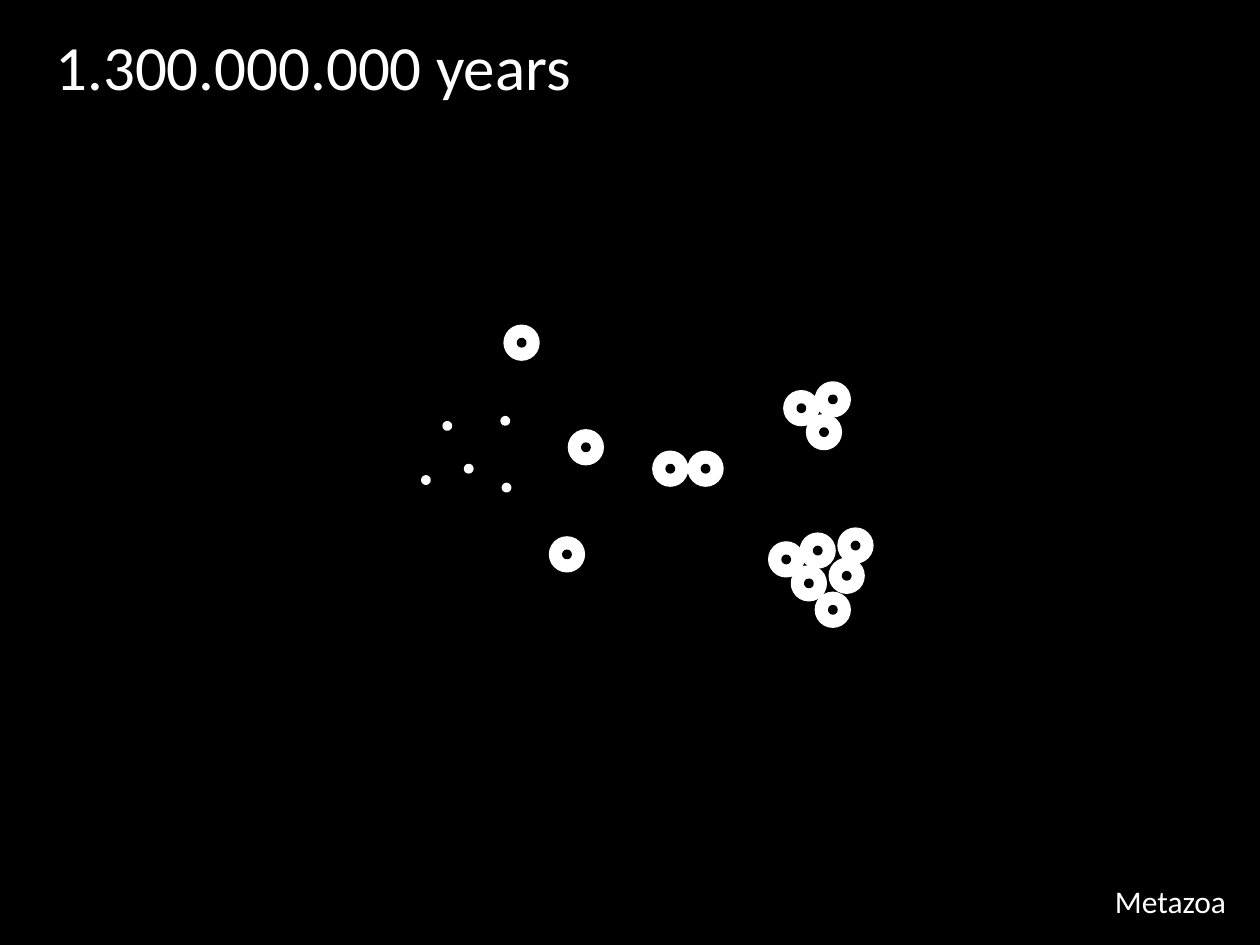
from dataclasses import dataclass

from pptx import Presentation
from pptx.dml.color import RGBColor
from pptx.enum.shapes import MSO_SHAPE
from pptx.enum.text import MSO_ANCHOR, MSO_AUTO_SIZE, PP_ALIGN
from pptx.util import Inches, Pt


@dataclass(frozen=True)
class Theme:
    dark: RGBColor = RGBColor(0, 0, 0)
    light: RGBColor = RGBColor(255, 255, 255)
    font: str = "Calibri"
    head: int = 36
    note: int = 18
    line: int = 2
    cell: float = 0.26
    dot: float = 0.05


class Board:
    def __init__(self, slide, theme):
        self.slide = slide
        self.theme = theme
        fill = slide.background.fill
        fill.solid()
        fill.fore_color.rgb = theme.dark

    def paint(self, shape, color):
        shape.fill.solid()
        shape.fill.fore_color.rgb = color
        shape.line.color.rgb = color
        shape.line.width = Pt(self.theme.line)

    def add_run(self, frame, text, size):
        para = frame.paragraphs[0]
        para.alignment = PP_ALIGN.LEFT
        run = para.add_run()
        run.text = text
        run.font.name = self.theme.font
        run.font.size = Pt(size)
        run.font.color.rgb = self.theme.light

    def title(self, text, x, y, w, h):
        shape = self.slide.shapes.title
        shape.left, shape.top = Inches(x), Inches(y)
        shape.width, shape.height = Inches(w), Inches(h)
        self.paint(shape, self.theme.dark)
        frame = shape.text_frame
        frame.auto_size = MSO_AUTO_SIZE.NONE
        frame.vertical_anchor = MSO_ANCHOR.MIDDLE
        self.add_run(frame, text, self.theme.head)

    def label(self, text, x, y, w, h):
        box = self.slide.shapes.add_textbox(
            Inches(x), Inches(y), Inches(w), Inches(h))
        frame = box.text_frame
        frame.word_wrap = False
        frame.auto_size = MSO_AUTO_SIZE.SHAPE_TO_FIT_TEXT
        self.add_run(frame, text, self.theme.note)

    def group(self):
        return self.slide.shapes.add_group_shape()

    def disc(self, group, x, y, size, color):
        """Draw a disc centred on x, y."""
        shape = group.shapes.add_shape(
            MSO_SHAPE.OVAL, Inches(x - size / 2), Inches(y - size / 2),
            Inches(size), Inches(size))
        shape.shadow.inherit = False
        self.paint(shape, color)

    def dot(self, group, x, y):
        self.disc(group, x, y, self.theme.dot, self.theme.light)

    def cell(self, group, x, y):
        """Draw a light cell with a dark nucleus."""
        self.disc(group, x, y, self.theme.cell, self.theme.light)
        self.disc(group, x, y, self.theme.dot, self.theme.dark)


# Centres of the single dots, free cells and cell clusters
DOTS = [(3.72, 3.72), (4.01, 3.34), (3.38, 3.81), (3.55, 3.38), (4.02, 3.87)]
FREE = [(4.65, 3.55), (5.32, 3.72), (4.14, 2.72), (4.5, 4.4), (5.6, 3.72)]
TRIO = [(6.36, 3.24), (6.54, 3.43), (6.61, 3.17)]
SHIFT = (-0.12, 1.2)
OUTER = [(6.72, 4.57), (6.61, 4.84), (6.79, 4.33)]


def main():
    deck = Presentation()
    deck.slide_width, deck.slide_height = Inches(10), Inches(7.5)
    board = Board(deck.slides.add_slide(deck.slide_layouts[5]), Theme())

    # Title
    board.title("1.300.000.000 years", 0.34, 0.3, 4.61, 0.44)

    # Dots and free cells share one group
    colony = board.group()
    for x, y in DOTS:
        board.dot(colony, x, y)
    for x, y in FREE:
        board.cell(colony, x, y)

    # The lower cluster repeats the trio and adds an outer row
    inner = [(x + SHIFT[0], y + SHIFT[1]) for x, y in TRIO]
    for x, y in TRIO + inner + OUTER:
        board.cell(board.group(), x, y)

    # Caption
    board.label("Metazoa", 8.75, 6.95, 1.09, 0.4)

    deck.save("out.pptx")


if __name__ == "__main__":
    main()
